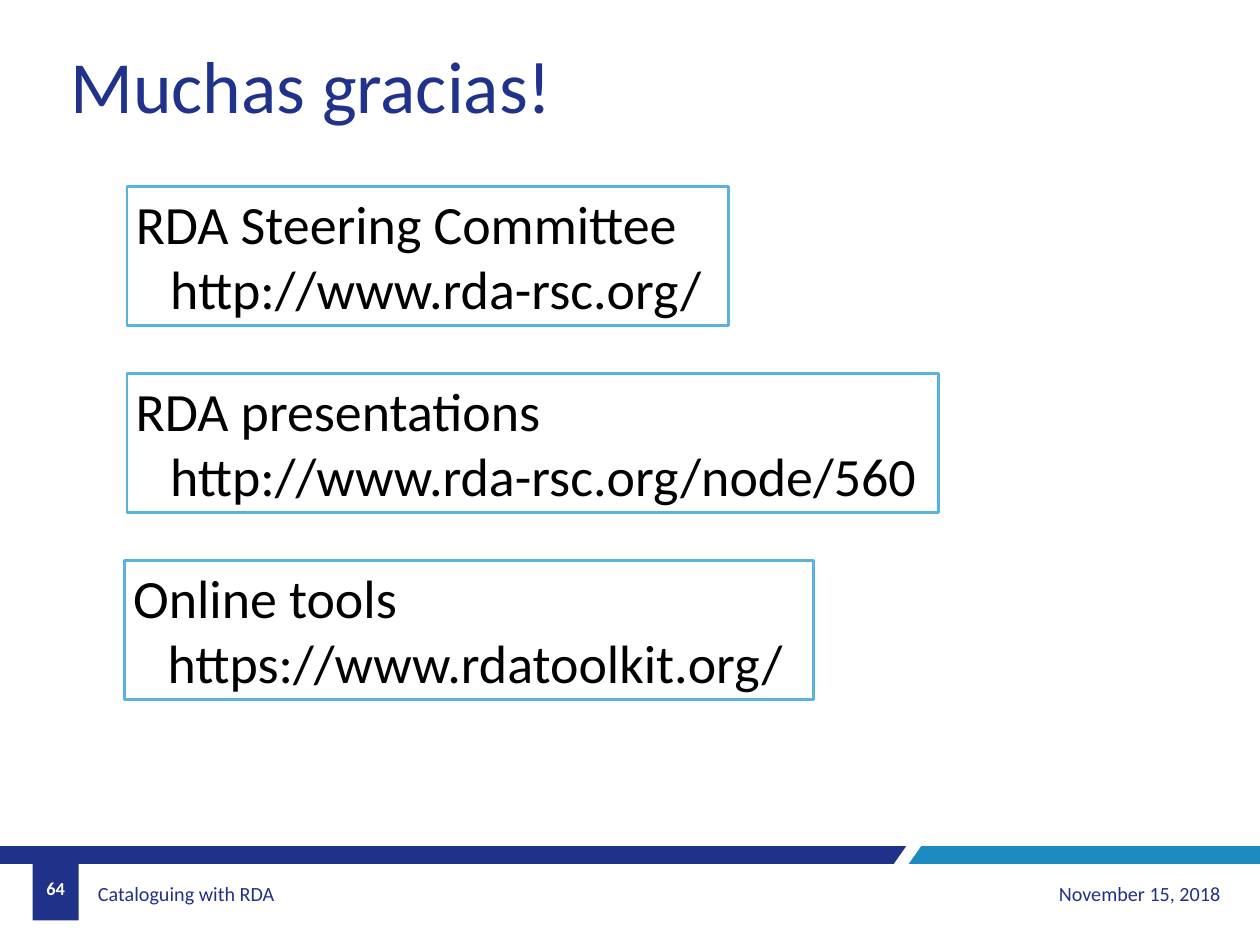
import pptx
import pptx.util
import pptx.dml.color
import pptx.enum.shapes
import pptx.enum.text

Inches = pptx.util.Inches
Align = pptx.enum.text.PP_ALIGN
Anchor = pptx.enum.text.MSO_ANCHOR
RECT = pptx.enum.shapes.MSO_SHAPE.RECTANGLE

NAVY, BLUE, SKY = "203189", "1D8BC1", "59B2DF"
WIDE, HIGH = 14.28, 10.71
BAR, BASE = 9.59, 9.79
TOP, STEP, TALL = 2.11, 2.12, 1.58

bands = [
    (NAVY, [(0, BAR), (10.27, BAR), (10.13, BASE), (0, BASE)]),
    (BLUE, [(10.44, BAR), (WIDE, BAR), (WIDE, BASE), (10.3, BASE)]),
]
labels = [
    ("Cataloguing with RDA", (1.04, 9.85, 5.52, 0.55), 16.4, NAVY, Align.LEFT, 0.07),
    ("November 15, 2018", (10.27, 9.85, 3.66, 0.55), 16.4, NAVY, Align.RIGHT, 0.1),
    ("64", (0.37, 9.79, 0.52, 0.55), 14.9, "FFFFFF", Align.CENTER, 0.1),
    ("Muchas gracias!", (0.7, 0.4, 5.73, 1.11), 60, "21328A", Align.LEFT, 0.1),
]
links = [
    ("RDA Steering Committee", "http://www.rda-rsc.org/", 1.44, 6.82),
    ("RDA presentations", "http://www.rda-rsc.org/node/560", 1.44, 9.2),
    ("Online tools", "https://www.rdatoolkit.org/", 1.41, 7.81),
]


def tint(text):
    return pptx.dml.color.RGBColor.from_string(text)


def paint(shape, fill=None, line=None):
    shape.shadow.inherit = False
    if fill:
        shape.fill.solid()
        shape.fill.fore_color.rgb = tint(fill)
    else:
        shape.fill.background()
    if line:
        shape.line.color.rgb = tint(line)
        shape.line.width = pptx.util.Pt(2.25)
    else:
        shape.line.fill.background()


def write(shape, text, size, color, align=Align.LEFT, anchor=Anchor.MIDDLE, side=0.1):
    frame = shape.text_frame
    frame.text = text
    frame.word_wrap = True
    frame.vertical_anchor = anchor
    frame.margin_left = frame.margin_right = Inches(side)
    for para in frame.paragraphs:
        para.alignment = align
        for run in para.runs:
            run.font.name = "Calibri"
            run.font.size = pptx.util.Pt(size)
            run.font.color.rgb = tint(color)
    return frame


deck = pptx.Presentation()
deck.slide_width, deck.slide_height = Inches(WIDE), Inches(HIGH)
slide = deck.slides.add_slide(deck.slide_layouts[6])
shapes = slide.shapes

for color, points in bands:
    first, *rest = [(Inches(x), Inches(y)) for x, y in points]
    path = shapes.build_freeform(*first)
    path.add_line_segments(rest, close=True)
    paint(path.convert_to_shape(), fill=color)

tab = shapes.add_shape(RECT, *map(Inches, (0.37, BAR, 0.52, 0.84)))
paint(tab, fill=NAVY)

for text, place, size, color, align, side in labels:
    box = shapes.add_textbox(*map(Inches, place))
    frame = write(box, text, size, color, align, side=side)
    frame.paragraphs[0].runs[0].font.bold = text == "64"

for row, (name, link, left, width) in enumerate(links):
    place = (left, TOP + row * STEP, width, TALL)
    box = shapes.add_shape(RECT, *map(Inches, place))
    paint(box, line=SKY)
    frame = write(box, f"{name}\n{link}", 44, "000000", anchor=Anchor.TOP)
    props = frame.paragraphs[1]._p.get_or_add_pPr()
    props.set("marL", str(Inches(0.39)))
    props.set("indent", "0")

deck.save("out.pptx")
